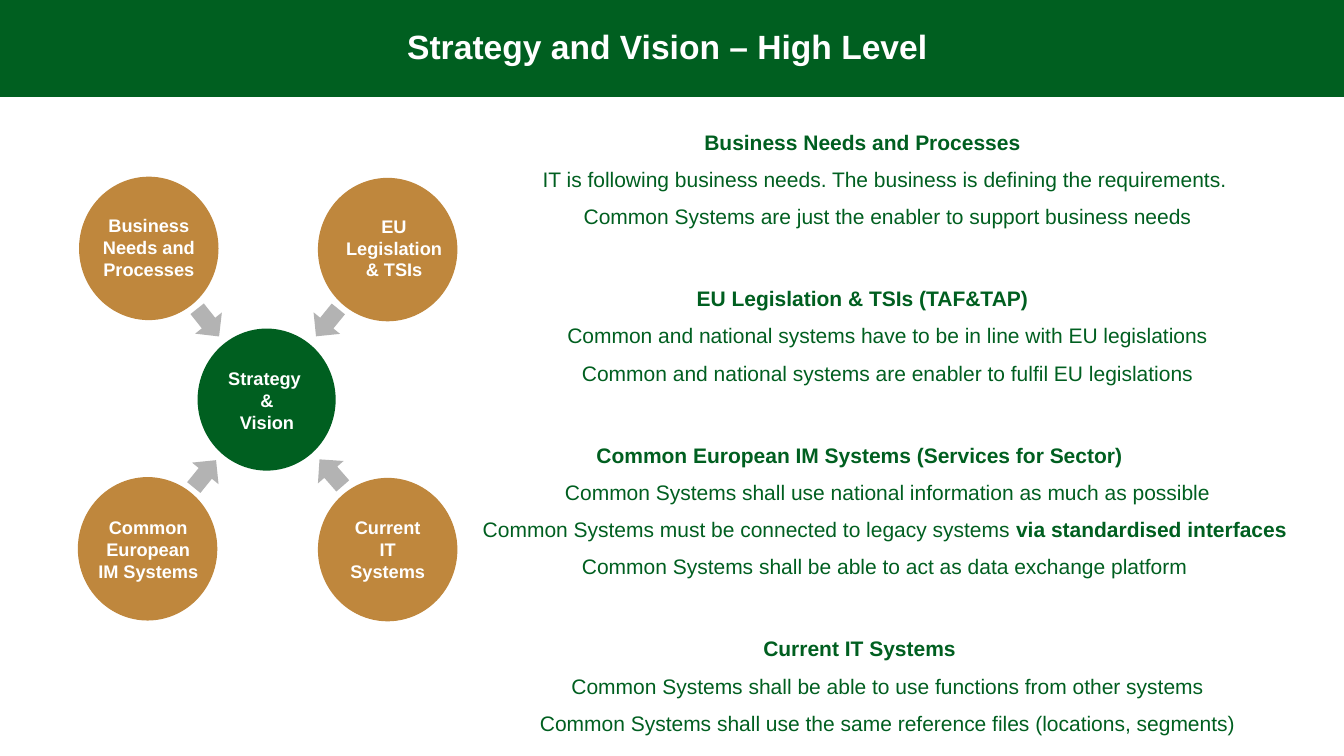
from dataclasses import dataclass
from typing import Optional

from lxml.etree import SubElement
from pptx import Presentation
from pptx.dml.color import RGBColor
from pptx.enum.shapes import MSO_SHAPE
from pptx.enum.text import MSO_ANCHOR, MSO_AUTO_SIZE, PP_ALIGN
from pptx.oxml.ns import qn
from pptx.util import Cm, Pt

COLORS = {"green": "005F20", "bronze": "BF873D", "grey": "B3B3B3", "white": "FFFFFF"}
FONT = "Arial"
CIRCLE_W, CIRCLE_H = 3.48, 3.58
ARROW_W, ARROW_H = 0.89, 0.86
LABEL_H = 1.93


@dataclass
class LabelBox:
    left: float
    top: float
    width: float


@dataclass
class Circle:
    left: float
    top: float
    color: str
    label: str
    box: Optional[LabelBox] = None
    outlined: bool = True


@dataclass
class Arrow:
    left: float
    top: float
    rotation: float


@dataclass
class Section:
    heading: str
    points: list[str]


EMPHASIS = "via standardised interfaces "

CIRCLES = [
    Circle(2.01, 4.47, "bronze", "Business Needs and Processes", LabelBox(2.29, 5.26, 2.92)),
    Circle(8.03, 4.5, "bronze", "EU Legislation & TSIs", LabelBox(8.33, 5.28, 3.2)),
    Circle(1.98, 12.04, "bronze", "Common European IM Systems", LabelBox(2.16, 12.88, 3.15)),
    Circle(4.98, 8.28, "green", "Strategy \n&\nVision", LabelBox(4.9, 9.12, 3.66), False),
    Circle(8.03, 12.06, "bronze", "Current IT Systems"),
]

ARROWS = [
    Arrow(7.9, 11.48, 228.8),
    Arrow(4.72, 11.51, 309.1),
    Arrow(7.8, 7.7, 129.1),
    Arrow(4.8, 7.7, 51.6),
]

SECTIONS = [
    Section("Business Needs and Processes", [
        "IT is following business needs. The business is defining the requirements. ",
        "Common Systems are just the enabler to support business needs",
    ]),
    Section("EU Legislation & TSIs (TAF&TAP)", [
        "Common and national systems have to be in line with EU legislations",
        "Common and national systems are enabler to fulfil EU legislations",
    ]),
    Section("Common European IM Systems (Services for Sector) ", [
        "Common Systems shall use national information as much as possible",
        "Common Systems must be connected to legacy systems " + EMPHASIS,
        "Common Systems shall be able to act as data exchange platform ",
    ]),
    Section("Current IT Systems ", [
        "Common Systems shall be able to use functions from other systems",
        "Common Systems shall use the same reference files (locations, segments)",
    ]),
]


def rgb(name: str) -> RGBColor:
    return RGBColor.from_string(COLORS[name])


def place(sp, left: float, top: float, width: float, height: float) -> None:
    sp.left, sp.top, sp.width, sp.height = Cm(left), Cm(top), Cm(width), Cm(height)


def style_run(r, size: float, color: str, bold: bool) -> None:
    r.font.name = FONT
    r.font.size = Pt(size)
    r.font.bold = bold
    r.font.color.rgb = rgb(color)


def write_label(tf, text: str) -> None:
    tf.word_wrap = True
    tf.vertical_anchor = MSO_ANCHOR.MIDDLE
    tf.text = text
    for p in tf.paragraphs:
        p.alignment = PP_ALIGN.CENTER
        for r in p.runs:
            style_run(r, 13, "white", True)


def add_solid(s, kind, left: float, top: float, width: float, height: float, color: str):
    sp = s.shapes.add_shape(kind, Cm(left), Cm(top), Cm(width), Cm(height))
    sp.shadow.inherit = False
    sp.fill.solid()
    sp.fill.fore_color.rgb = rgb(color)
    sp.line.fill.background()
    return sp


def draw_circle(s, circle: Circle) -> None:
    sp = add_solid(s, MSO_SHAPE.OVAL, circle.left, circle.top, CIRCLE_W, CIRCLE_H, circle.color)
    if circle.outlined:
        sp.line.color.rgb = rgb(circle.color)
        sp.line.width = Pt(1)
    if circle.box:
        box = circle.box
        sp = s.shapes.add_textbox(Cm(box.left), Cm(box.top), Cm(box.width), Cm(LABEL_H))
    write_label(sp.text_frame, circle.label)


def draw_arrow(s, arrow: Arrow) -> None:
    sp = add_solid(s, MSO_SHAPE.RIGHT_ARROW, arrow.left, arrow.top, ARROW_W, ARROW_H, "grey")
    sp.rotation = arrow.rotation


def write_line(p, text: str, level: int, space_before: float) -> None:
    plain = text.removesuffix(EMPHASIS)
    p.text = plain
    if plain != text:
        p.add_run().text = EMPHASIS
    p.level = level
    pPr = p._p.get_or_add_pPr()
    pPr.set("marL", str(Cm(1.27 * level)))
    pPr.set("indent", "0")
    SubElement(pPr, qn("a:buNone"))
    p.alignment = PP_ALIGN.CENTER
    p.line_spacing = 1.2
    p.space_before = Pt(space_before)
    p.space_after = Pt(0)
    for r in p.runs:
        style_run(r, 15, "green", level == 0 or r.text == EMPHASIS)


def write_title(sp, text: str) -> None:
    place(sp, 0, 0, 33.87, 2.44)
    sp.fill.solid()
    sp.fill.fore_color.rgb = rgb("green")
    tf = sp.text_frame
    tf.auto_size = MSO_AUTO_SIZE.NONE
    tf.vertical_anchor = MSO_ANCHOR.MIDDLE
    tf.text = text
    p = tf.paragraphs[0]
    p.alignment = PP_ALIGN.CENTER
    p.line_spacing = 0.9
    style_run(p.runs[0], 24, "white", True)


def write_sections(sp, sections: list[Section]) -> None:
    place(sp, 10.24, 3, 22.99, 13.08)
    tf = sp.text_frame
    tf.auto_size = MSO_AUTO_SIZE.NONE
    tf.word_wrap = True
    tf.vertical_anchor = MSO_ANCHOR.TOP
    for i, section in enumerate(sections):
        p = tf.add_paragraph() if i else tf.paragraphs[0]
        write_line(p, section.heading, 0, 37 if i else 0)
        for point in section.points:
            write_line(tf.add_paragraph(), point, 1, 5)


def main() -> None:
    prs = Presentation()
    prs.slide_width, prs.slide_height = Cm(33.87), Cm(19.05)
    s = prs.slides.add_slide(prs.slide_layouts[1])
    write_title(s.shapes.title, "Strategy and Vision – High Level ")
    for circle in CIRCLES:
        draw_circle(s, circle)
    for arrow in ARROWS:
        draw_arrow(s, arrow)
    write_sections(s.placeholders[1], SECTIONS)
    prs.save("out.pptx")


if __name__ == "__main__":
    main()
